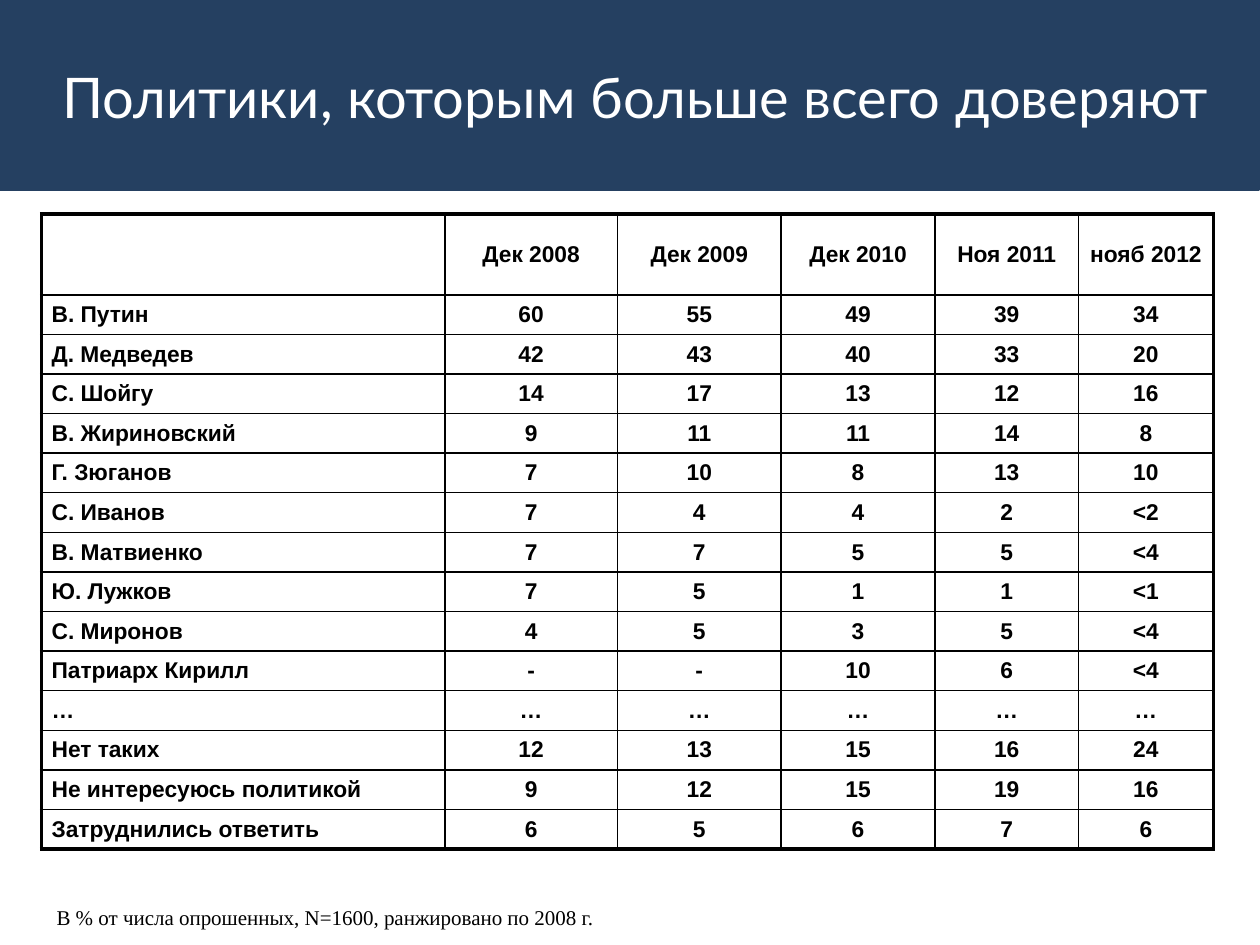
from lxml import etree
from pptx import Presentation
from pptx.dml.color import RGBColor
from pptx.enum import shapes, text
from pptx.oxml import ns
from pptx.util import Inches, Pt

NAVY, WHITE, BLACK = "254061", "FFFFFF", "000000"
THIN, THICK = Pt(1), Pt(2.25)

HEADER = ["", "Дек 2008", "Дек 2009", "Дек 2010", "Ноя 2011", "нояб 2012"]
RATINGS = [
    ["В. Путин", "60", "55", "49", "39", "34"],
    ["Д. Медведев", "42", "43", "40", "33", "20"],
    ["С. Шойгу", "14", "17", "13", "12", "16"],
    ["В. Жириновский", "9", "11", "11", "14", "8"],
    ["Г. Зюганов", "7", "10", "8", "13", "10"],
    ["С. Иванов", "7", "4", "4", "2", "<2"],
    ["В. Матвиенко", "7", "7", "5", "5", "<4"],
    ["Ю. Лужков", "7", "5", "1", "1", "<1"],
    ["С. Миронов", "4", "5", "3", "5", "<4"],
    ["Патриарх Кирилл", "-", "-", "10", "6", "<4"],
    ["…"] * 6,
    ["Нет таких", "12", "13", "15", "16", "24"],
    ["Не интересуюсь политикой", "9", "12", "15", "19", "16"],
    ["Затруднились ответить", "6", "5", "6", "7", "6"],
]
COLUMN_WIDTHS = [3.2, 1.37, 1.3, 1.22, 1.14, 1.07]
HEADER_HEIGHT = 0.64


def color(value):
    return RGBColor.from_string(value)


def format_text(frame, font_name, size, font_color, align, bold=False):
    frame.vertical_anchor = text.MSO_ANCHOR.MIDDLE
    for para in frame.paragraphs:
        para.alignment = align
        for span in para.runs:
            span.font.name = font_name
            span.font.size = Pt(size)
            span.font.bold = bold
            span.font.color.rgb = color(font_color)


def set_borders(cell, widths):
    """Draw the left, right, top and bottom lines of a cell."""
    properties = cell._tc.get_or_add_tcPr()
    for position, (side, width) in enumerate(zip("LRTB", widths)):
        line = etree.Element(ns.qn(f"a:ln{side}"), w=str(width))
        fill = etree.SubElement(line, ns.qn("a:solidFill"))
        etree.SubElement(fill, ns.qn("a:srgbClr"), val=BLACK)
        properties.insert(position, line)


def add_title_band(page, left, top, width, height):
    band = page.shapes.add_shape(shapes.MSO_SHAPE.RECTANGLE, Inches(left),
                                 Inches(top), Inches(width), Inches(height))
    band.shadow.inherit = False
    band.fill.solid()
    band.fill.fore_color.rgb = color(NAVY)
    band.line.color.rgb = color(NAVY)
    band.line.width = Pt(2)

    # The title stands in front of the band
    title = page.shapes.title
    band._element.addnext(title._element)
    title.left, title.top = Inches(left + 0.2), Inches(top + 0.13)
    title.width, title.height = Inches(width - 0.3), Inches(height - 0.24)
    title.text_frame.text = "Политики, которым больше всего доверяют"
    format_text(title.text_frame, "Lato", 32, WHITE, text.PP_ALIGN.CENTER)


def add_ratings_table(page, left, top, width, height):
    rows = [HEADER] + RATINGS
    last_row, last_column = len(rows) - 1, len(HEADER) - 1
    table = page.shapes.add_table(len(rows), len(HEADER), Inches(left), Inches(top),
                                  Inches(width), Inches(height)).table
    table.first_row = table.horz_banding = False
    for column, column_width in zip(table.columns, COLUMN_WIDTHS):
        column.width = Inches(column_width)
    for i, row in enumerate(table.rows):
        row.height = Inches((height - HEADER_HEIGHT) / last_row if i else HEADER_HEIGHT)

    for i, values in enumerate(rows):
        for j, value in enumerate(values):
            cell = table.cell(i, j)
            cell.text_frame.text = value
            is_name = i > 0 and j == 0
            align = text.PP_ALIGN.LEFT if is_name else text.PP_ALIGN.CENTER
            format_text(cell.text_frame, "Arial", 13, BLACK, align, bold=True)
            cell.vertical_anchor = text.MSO_ANCHOR.MIDDLE

            # Header cells are open, body cells are white
            side, end = (0, 0.04) if i else (0.04, 0.05)
            cell.margin_left = Inches(0.08 if is_name else side)
            cell.margin_right = Inches(side)
            cell.margin_top = cell.margin_bottom = Inches(end)
            if i:
                cell.fill.solid()
                cell.fill.fore_color.rgb = color(WHITE)
            else:
                cell.fill.background()

            # Thick outline, thin inner grid
            outer = (j == 0, j == last_column, i == 0, i == last_row)
            set_borders(cell, [THICK if edge else THIN for edge in outer])


def add_footnote(page, left, top, width, height):
    box = page.shapes.add_textbox(Inches(left), Inches(top), Inches(width), Inches(height))
    frame = box.text_frame
    frame.word_wrap = True
    frame.auto_size = text.MSO_AUTO_SIZE.SHAPE_TO_FIT_TEXT
    frame.text = "В % от числа опрошенных, N=1600, ранжировано по 2008 г."
    format_text(frame, "Times New Roman", 12, BLACK, text.PP_ALIGN.LEFT)


def main():
    deck = Presentation()
    deck.slide_width, deck.slide_height = Inches(10), Inches(7.5)
    page = deck.slides.add_slide(deck.slide_layouts[5])
    add_title_band(page, 0, 0, 9.99, 1.5)
    add_footnote(page, 0.35, 7.13, 9.45, 0.3)
    add_ratings_table(page, 0.33, 1.7, 9.3, 5.04)
    deck.save("out.pptx")


if __name__ == "__main__":
    main()
